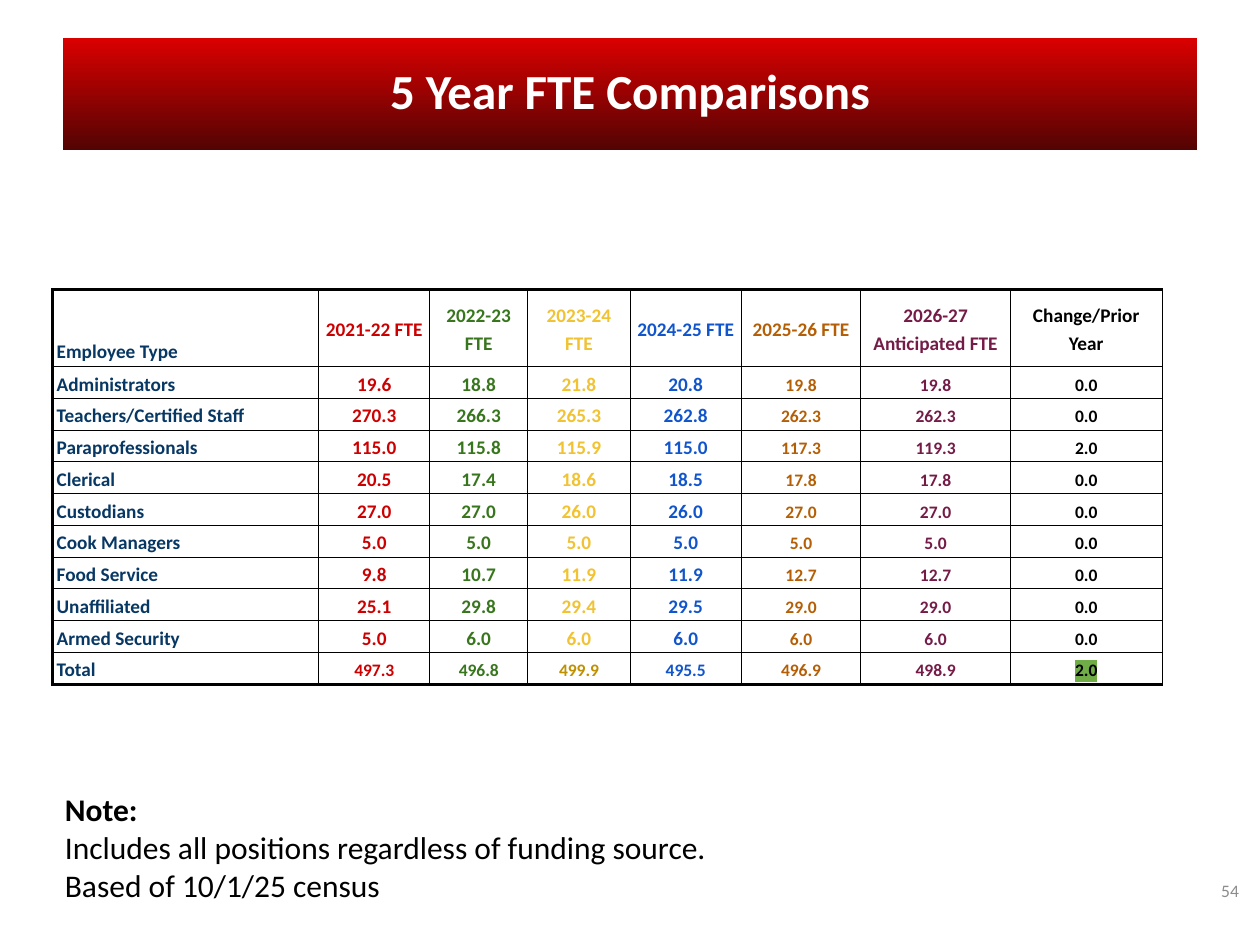
"""Build the five-year FTE comparison slide."""
from lxml.etree import SubElement
from pptx import Presentation
from pptx.dml.color import RGBColor
from pptx.enum.shapes import MSO_SHAPE as Shape
from pptx.enum.text import MSO_ANCHOR as Anchor, PP_ALIGN as Align
from pptx.oxml.ns import qn
from pptx.util import Pt


def rgb(color):
    return RGBColor.from_string(color)


def style(paragraph, size, color, bold=False, align=Align.LEFT, spacing=1.0):
    paragraph.alignment = align
    paragraph.line_spacing = spacing
    font = paragraph.font
    font.name, font.size, font.bold = "Calibri", Pt(size), bold
    font.color.rgb = rgb(color)


deck = Presentation()
deck.slide_width, deck.slide_height = Pt(720), Pt(540)
slide = deck.slides.add_slide(deck.slide_layouts[6])
shapes = slide.shapes

page_number = shapes.add_textbox(Pt(671.8), Pt(488.2), Pt(43.2), Pt(41)).text_frame
page_number.word_wrap = True
page_number.vertical_anchor = Anchor.MIDDLE
page_number.text = "54"
style(page_number.paragraphs[0], 10, "8C8C8C", align=Align.RIGHT)

banner = shapes.add_shape(Shape.RECTANGLE, Pt(36), Pt(21.6), Pt(648), Pt(64))
banner.shadow.inherit = False
banner.line.fill.background()
banner.fill.gradient()
banner.fill.gradient_angle = 270
for stop, color in zip(banner.fill.gradient_stops, ("DB0000", "540303")):
    stop.color.rgb = rgb(color)
title = banner.text_frame
title.vertical_anchor = Anchor.MIDDLE
title.text = "5 Year FTE Comparisons"
style(title.paragraphs[0], 28, "FFFFFF", True, Align.CENTER, 0.9)

note = shapes.add_textbox(Pt(30), Pt(444.2), Pt(598.3), Pt(65.5)).text_frame
note.word_wrap = True
note.margin_top = note.margin_bottom = Pt(7.2)
note.text = "Note:\nIncludes all positions regardless of funding source.\nBased of 10/1/25 census"
for index, paragraph in enumerate(note.paragraphs):
    style(paragraph, 18, "000000", bold=index == 0)

staffing = [
    ("Employee Type", "2021-22 FTE", "2022-23 FTE", "2023-24 FTE", "2024-25 FTE",
     "2025-26 FTE", "2026-27 Anticipated FTE", "Change/Prior Year"),
    ("Administrators", "19.6", "18.8", "21.8", "20.8", "19.8", "19.8", "0.0"),
    ("Teachers/Certified Staff", "270.3", "266.3", "265.3", "262.8", "262.3", "262.3", "0.0"),
    ("Paraprofessionals", "115.0", "115.8", "115.9", "115.0", "117.3", "119.3", "2.0"),
    ("Clerical", "20.5", "17.4", "18.6", "18.5", "17.8", "17.8", "0.0"),
    ("Custodians", "27.0", "27.0", "26.0", "26.0", "27.0", "27.0", "0.0"),
    ("Cook Managers", "5.0", "5.0", "5.0", "5.0", "5.0", "5.0", "0.0"),
    ("Food Service", "9.8", "10.7", "11.9", "11.9", "12.7", "12.7", "0.0"),
    ("Unaffiliated", "25.1", "29.8", "29.4", "29.5", "29.0", "29.0", "0.0"),
    ("Armed Security", "5.0", "6.0", "6.0", "6.0", "6.0", "6.0", "0.0"),
    ("Total", "497.3", "496.8", "499.9", "495.5", "496.9", "498.9", "2.0"),
]
column_colors = ["073763", "CC0000", "38761D", "F1C232", "1155CC", "B45F06", "741B47", "000000"]
column_widths = [152, 63.4, 56, 58.6, 63.4, 68.4, 85.4, 86.8]
row_heights = [43.9] + [16.6] * 9 + [18]
total_row = len(staffing) - 1
change_column = len(column_colors) - 1

fte_table = shapes.add_table(len(staffing), len(column_colors), Pt(30.2), Pt(165.6),
                             Pt(sum(column_widths)), Pt(sum(row_heights))).table
fte_table.first_row = fte_table.horz_banding = False
for column, width in zip(fte_table.columns, column_widths):
    column.width = Pt(width)

for r, (values, height) in enumerate(zip(staffing, row_heights)):
    fte_table.rows[r].height = Pt(height)
    for c, (value, color) in enumerate(zip(values, column_colors)):
        cell = fte_table.cell(r, c)
        cell.margin_left = cell.margin_right = Pt(2.2)
        cell.margin_top = cell.margin_bottom = Pt(1.5)
        cell.vertical_anchor = Anchor.MIDDLE if r == 0 and c > 0 else Anchor.BOTTOM
        edges = {"L": c == 0, "R": False, "T": r == 0, "B": r == total_row}
        for edge, thick in edges.items():
            border = SubElement(cell._tc.get_or_add_tcPr(), qn(f"a:ln{edge}"),
                                w=str(Pt(2 if thick else 0.5)))
            SubElement(SubElement(border, qn("a:solidFill")), qn("a:srgbClr"), val="000000")
        if c == change_column:
            cell.fill.background()
        else:
            cell.fill.solid()
            cell.fill.fore_color.rgb = rgb("FFFFFF")
        cell.text = value
        small = r > 0 and c > 0 and (c >= 5 or r == total_row)
        if r == total_row and c == 3:
            color = "BF9000"
        style(cell.text_frame.paragraphs[0], 10 if small else 11, color, True,
              Align.CENTER if c else Align.LEFT, 1.15)

total_change = fte_table.cell(total_row, change_column).text_frame.paragraphs[0].runs[0]
highlight = SubElement(total_change._r.get_or_add_rPr(), qn("a:highlight"))
SubElement(highlight, qn("a:srgbClr"), val="70AD47")

deck.save("out.pptx")
